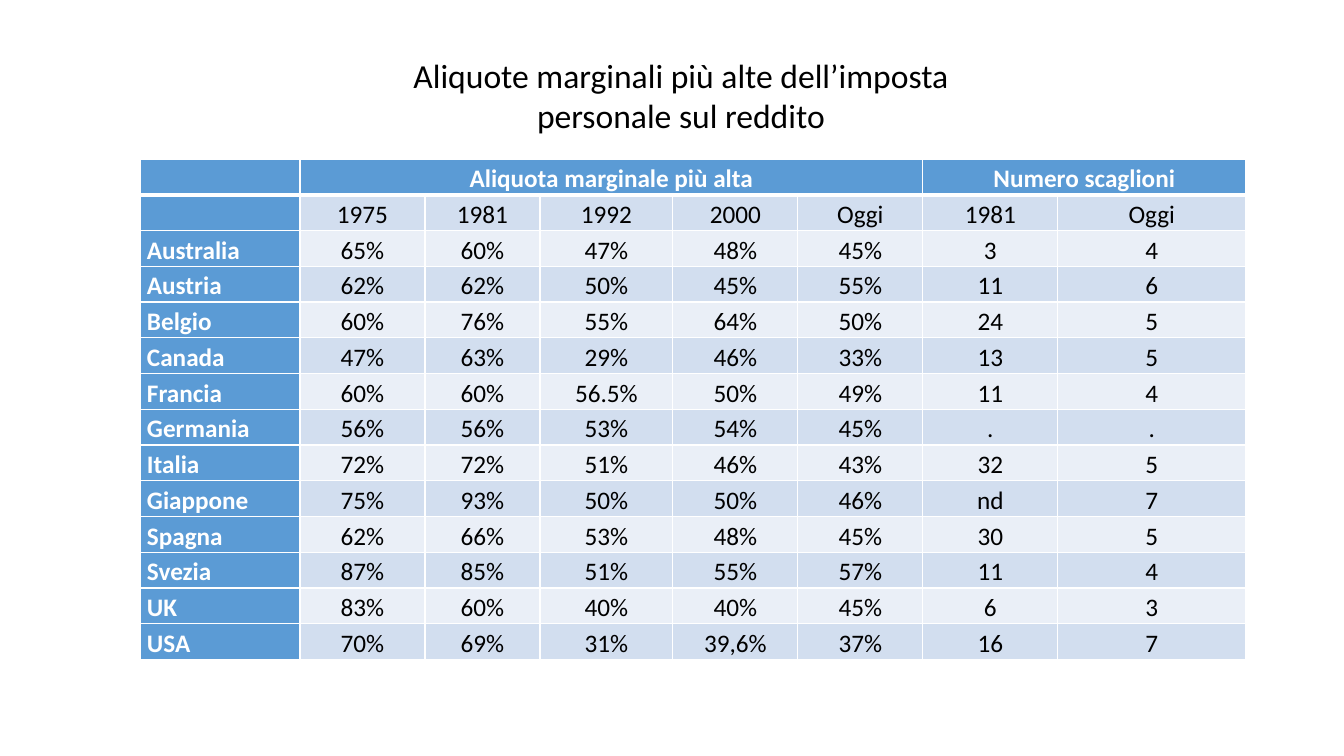
from dataclasses import dataclass

import lxml.etree
import pptx
import pptx.dml.color
import pptx.enum.text
import pptx.oxml.ns
import pptx.util

ALIGN = pptx.enum.text.PP_ALIGN
PX = 914400 / 100.8


@dataclass(frozen=True)
class Theme:
    font: str = "Calibri"
    ink: str = "000000"
    white: str = "FFFFFF"
    header: str = "5B9BD5"
    bands: tuple = ("EAEFF7", "D2DEEF")
    title_size: int = 24
    table_size: int = 18
    border: int = 1
    header_border: int = 3


def px(length):
    return pptx.util.Emu(round(length * PX))


def rgb(colour):
    return pptx.dml.color.RGBColor.from_string(colour)


def apply(target, formats):
    for name, value in formats.items():
        setattr(target, name, value)


class SlideBuilder:
    def __init__(self, deck, theme):
        self.theme = theme
        self.page = deck.slides.add_slide(deck.slide_layouts.get_by_name("Title Only"))

    def add_text(self, paragraph, text, size, colour, bold, align, spacing):
        apply(paragraph, {"alignment": align, "line_spacing": spacing})
        if text:
            span = paragraph.add_run()
            span.text = text
            apply(span.font, {"name": self.theme.font, "size": pptx.util.Pt(size), "bold": bold})
            span.font.color.rgb = rgb(colour)

    def title(self, text, left, top, width, height):
        box = self.page.shapes.title
        apply(box, {"left": px(left), "top": px(top), "width": px(width), "height": px(height)})
        apply(box.text_frame, {
            "word_wrap": True,
            "vertical_anchor": pptx.enum.text.MSO_ANCHOR.TOP,
            "auto_size": pptx.enum.text.MSO_AUTO_SIZE.SHAPE_TO_FIT_TEXT,
        })
        self.add_text(box.text_frame.paragraphs[0], text, self.theme.title_size,
                      self.theme.ink, False, ALIGN.CENTER, 1.0)

    def borders(self, cell, widths):
        """Put the four edge lines ahead of the cell's fill, as the schema orders them."""
        properties = cell._tc.get_or_add_tcPr()
        for position, (side, width) in enumerate(widths.items()):
            line = lxml.etree.Element(pptx.oxml.ns.qn(f"a:ln{side}"), w=str(pptx.util.Pt(width)))
            fill = lxml.etree.SubElement(line, pptx.oxml.ns.qn("a:solidFill"))
            lxml.etree.SubElement(fill, pptx.oxml.ns.qn("a:srgbClr"), val=self.theme.white)
            properties.insert(position, line)

    def cell(self, cell, text, row, column):
        theme = self.theme
        heading = row == 0 or column == 0
        apply(cell, {"margin_left": px(7), "margin_right": px(7),
                     "margin_top": 0, "margin_bottom": 0})
        cell.fill.solid()
        cell.fill.fore_color.rgb = rgb(theme.header if heading else theme.bands[row % 2])
        self.borders(cell, {
            "L": theme.border,
            "R": theme.border,
            "T": theme.header_border if row == 1 else theme.border,
            "B": theme.header_border if row == 0 else theme.border,
        })
        self.add_text(cell.text_frame.paragraphs[0], text, theme.table_size,
                      theme.white if heading else theme.ink, heading,
                      ALIGN.CENTER if column else ALIGN.LEFT, 1.15)

    def table(self, rows, left, top, height, widths, merges):
        frame = self.page.shapes.add_table(len(rows), len(widths), px(left), px(top),
                                           px(sum(widths)), px(height))
        table = frame.table
        for column, width in zip(table.columns, widths):
            column.width = px(width)
        for row in table.rows:
            row.height = px(height / len(rows))
        for row, texts in enumerate(rows):
            for column, text in enumerate(texts):
                self.cell(table.cell(row, column), text, row, column)
        for first, last in merges:
            table.cell(0, first).merge(table.cell(0, last))


RATES = [
    ["", "Aliquota marginale più alta", "", "", "", "", "Numero scaglioni", ""],
    ["", "1975", "1981", "1992", "2000", "Oggi", "1981", "Oggi"],
    ["Australia", "65%", "60%", "47%", "48%", "45%", "3", "4"],
    ["Austria", "62%", "62%", "50%", "45%", "55%", "11", "6"],
    ["Belgio", "60%", "76%", "55%", "64%", "50%", "24", "5"],
    ["Canada", "47%", "63%", "29%", "46%", "33%", "13", "5"],
    ["Francia", "60%", "60%", "56.5%", "50%", "49%", "11", "4"],
    ["Germania", "56%", "56%", "53%", "54%", "45%", ".", "."],
    ["Italia", "72%", "72%", "51%", "46%", "43%", "32", "5"],
    ["Giappone", "75%", "93%", "50%", "50%", "46%", "nd", "7"],
    ["Spagna", "62%", "66%", "53%", "48%", "45%", "30", "5"],
    ["Svezia", "87%", "85%", "51%", "55%", "57%", "11", "4"],
    ["UK", "83%", "60%", "40%", "40%", "45%", "6", "3"],
    ["USA", "70%", "69%", "31%", "39,6%", "37%", "16", "7"],
]


def main():
    deck = pptx.Presentation()
    apply(deck, {"slide_width": px(1344), "slide_height": px(756)})
    slide = SlideBuilder(deck, Theme())
    slide.title("Aliquote marginali più alte dell’imposta personale sul reddito",
                left=345, top=50, width=672, height=92)
    slide.table(RATES, left=140, top=159, height=501,
                widths=[160, 125, 115, 133, 125, 125, 135, 188],
                merges=[(1, 5), (6, 7)])
    deck.save("out.pptx")


if __name__ == "__main__":
    main()
